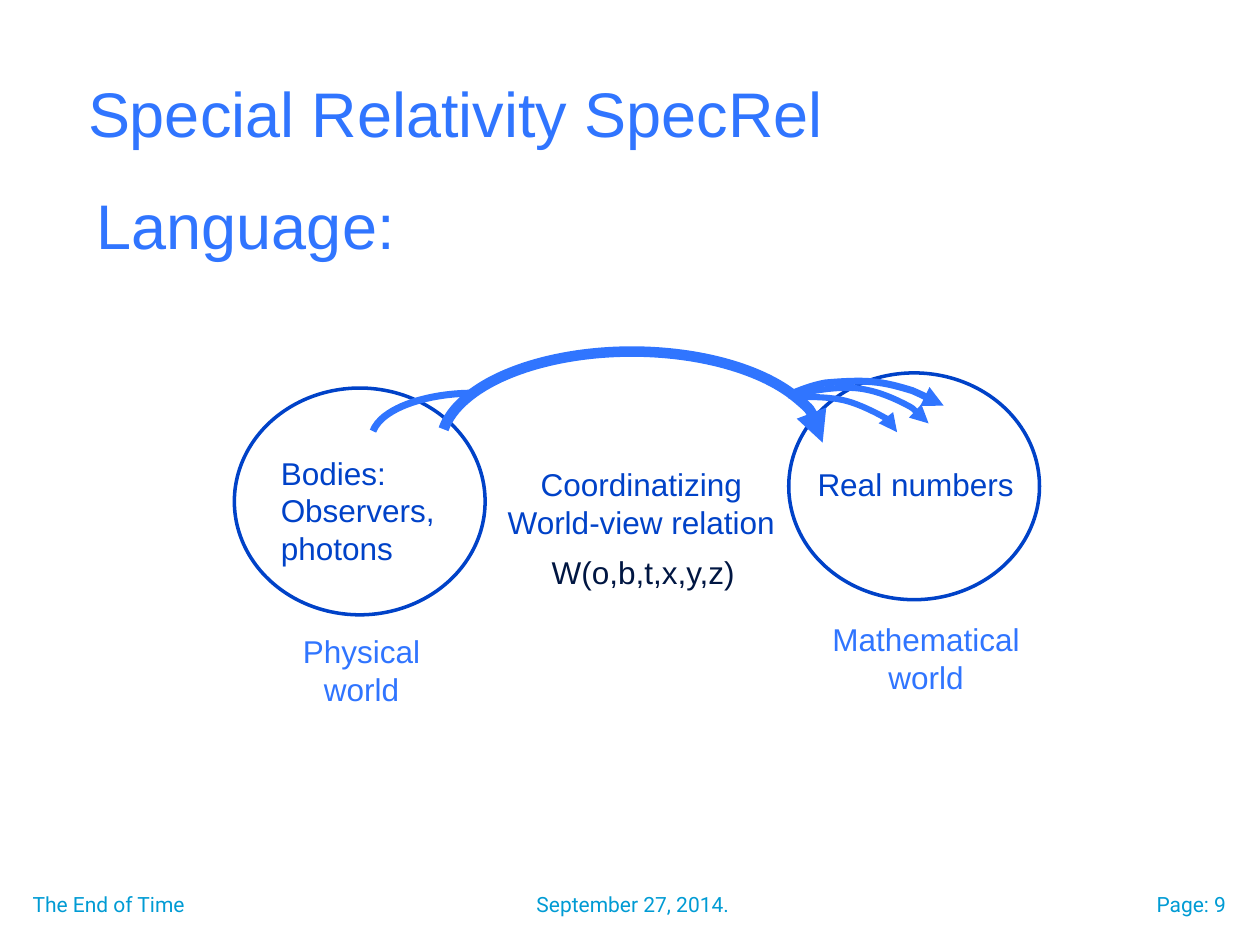
from pptx import Presentation
from pptx.dml.color import RGBColor
from pptx.enum.shapes import MSO_SHAPE as Kind
from pptx.enum.text import MSO_AUTO_SIZE as Fit, PP_ALIGN as Align
from pptx.oxml.ns import qn
from pptx.util import Inches, Pt
from lxml.etree import SubElement

HUES = {"sky": "3075FF", "blue": "0042C8", "navy": "001642", "foot": "009BD4"}
ALIGNS = {"l": Align.LEFT, "c": Align.CENTER, "r": Align.RIGHT}

FOOTS = [
    (["September 27, 2014."], (4.16, 7.03, 4.43, 0.32), "l"),
    (["The End of Time"], (0.16, 7.03, 3.91, 0.32), "l"),
    (["Page: 9"], (9, 7.03, 0.83, 0.32), "r"),
]
HEADS = [
    (["Special Relativity SpecRel"], (0.6, 0.54, 6.09, 0.71)),
    (["Language:"], (0.67, 1.43, 2.59, 0.71)),
]
WORLDS = [(1.86, 3.08, 1.99, 1.8), (6.26, 2.96, 1.99, 1.8)]
LABELS = [
    (["Mathematical", "world"], (6.5, 4.87, 1.7, 0.71), "c", "sky"),
    (["Real numbers"], (6.39, 3.64, 1.77, 0.4), "l", "blue"),
    (["Bodies:", "Observers,", "photons"], (2.13, 3.55, 1.51, 1.01), "l", "blue"),
    (["Coordinatizing", "World-view relation"], (3.92, 3.64, 2.34, 0.71), "c", "blue"),
    (["Physical", "world"], (2.3, 4.97, 1.14, 0.71), "c", "sky"),
    (["W(o,b,t,x,y,z)"], (4.28, 4.34, 1.67, 0.4), "l", "navy"),
]
CURVES = [
    (4, [(6.25, 3.14), (6.34, 3.1), (6.44, 3.06), (6.55, 3.04),
         (6.66, 3.03), (6.81, 3.02), (6.92, 3.03),
         (7.04, 3.04), (7.14, 3.07), (7.24, 3.1),
         (7.33, 3.14), (7.49, 3.22), (7.49, 3.22)]),
    (3.5, [(6.27, 3.14), (6.45, 3.1), (6.63, 3.07), (6.78, 3.08),
           (6.93, 3.09), (7.07, 3.15), (7.17, 3.2),
           (7.27, 3.25), (7.37, 3.36), (7.37, 3.36)]),
    (3.5, [(6.31, 3.15), (6.45, 3.15), (6.59, 3.15), (6.71, 3.18),
           (6.83, 3.21), (6.98, 3.29), (7.05, 3.33),
           (7.12, 3.37), (7.12, 3.4), (7.12, 3.43)]),
]


def paint(hue):
    return RGBColor.from_string(HUES[hue])


def write(rows, box, size, hue, side="l", font="Arial", wrap=False):
    frame = shapes.add_textbox(*map(Inches, box)).text_frame
    frame.word_wrap = wrap
    frame.auto_size = Fit.NONE if wrap else Fit.SHAPE_TO_FIT_TEXT
    frame.text = "\n".join(rows)
    for para in frame.paragraphs:
        para.alignment = ALIGNS[side]
        para.font.name, para.font.size = font, Pt(size)
        para.font.color.rgb = paint(hue)


def stroke(shape, width, hue="sky", head=False):
    shape.shadow.inherit = False
    shape.fill.background()
    shape.line.color.rgb = paint(hue)
    shape.line.width = Pt(width)
    if head:
        SubElement(shape.line._get_or_add_ln(), qn("a:tailEnd"), type="triangle")


def arc(box, start, end, width, head=False):
    shape = shapes.add_shape(Kind.ARC, *map(Inches, box))
    for i, angle in enumerate((start, end)):
        shape.adjustments[i] = angle * 0.6
    stroke(shape, width, head=head)
    return shape


def curve(width, dots):
    first, *rest = [(Inches(x), Inches(y)) for x, y in dots]
    pen = shapes.build_freeform(*first)
    pen.add_line_segments(rest, close=False)
    shape = pen.convert_to_shape()
    route = next(shape._element.iter(qn("a:path")))
    lines = route.findall(qn("a:lnTo"))
    for i in range(0, len(lines), 3):
        bend = SubElement(route, qn("a:cubicBezTo"))
        for line in lines[i:i + 3]:
            bend.append(line[0])
            route.remove(line)
    stroke(shape, width, head=True)


deck = Presentation()
deck.slide_width, deck.slide_height = Inches(10), Inches(7.5)
shapes = deck.slides.add_slide(deck.slide_layouts[6]).shapes

for rows, box, side in FOOTS:
    write(rows, box, 12, "foot", side, "Roboto", True)
for rows, box in HEADS:
    write(rows, box, 36, "sky")
for box in WORLDS:
    stroke(shapes.add_shape(Kind.OVAL, *map(Inches, box)), 2, "blue")
for rows, box, side, hue in LABELS:
    write(rows, box, 18, hue, side)

small = arc((2.95, 3.12, 1.63, 0.72), 270, 355.87, 4)
small._element.spPr.xfrm.set("flipH", "1")
for width, dots in CURVES:
    curve(width, dots)
arc((3.5, 2.79, 3.03, 1.48), 184.72, 359.35, 6, head=True)

deck.save("out.pptx")
